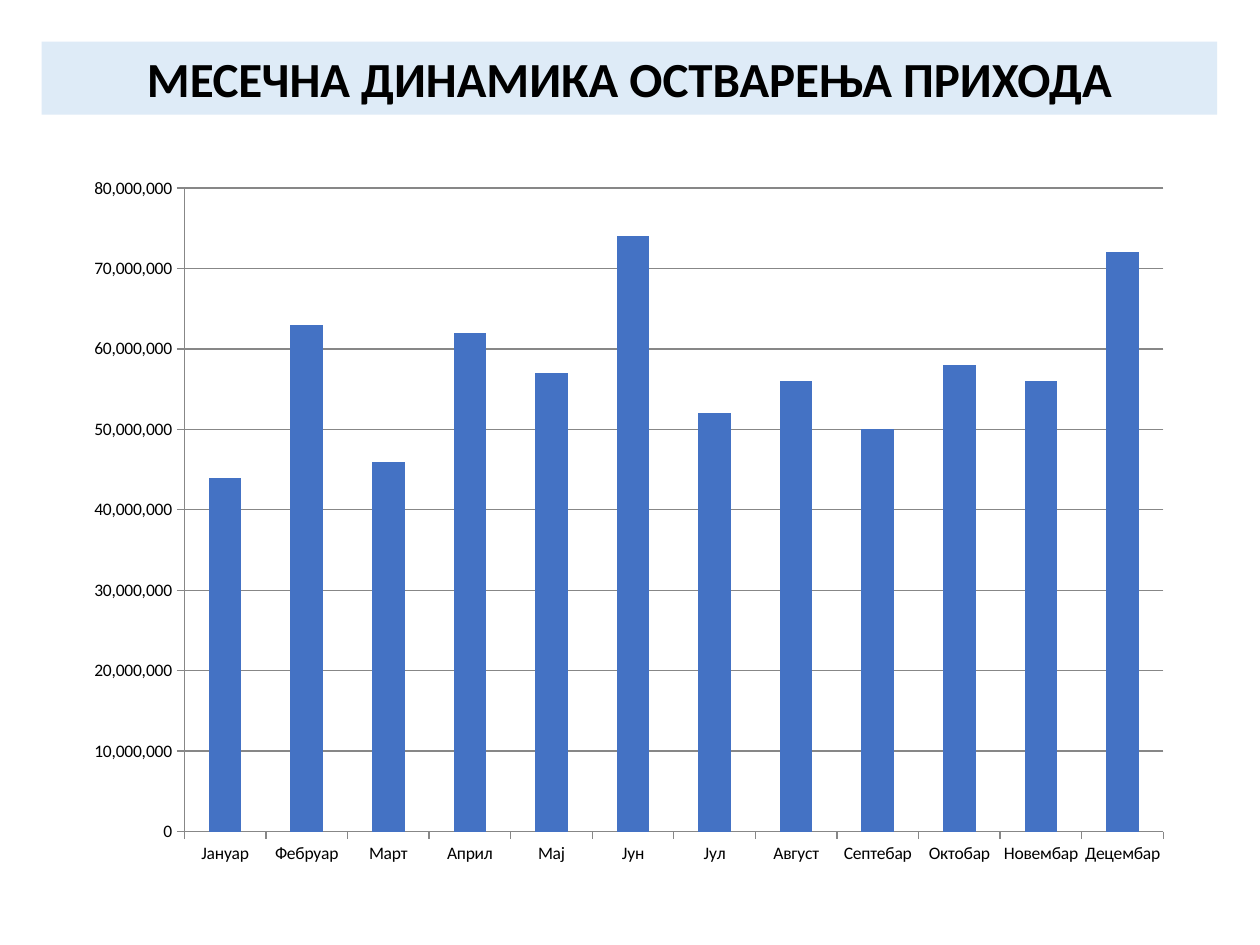
from dataclasses import dataclass

from lxml import etree
from pptx import Presentation
from pptx import util as u
from pptx.chart import data
from pptx.dml import color
from pptx.enum import chart as charts
from pptx.enum import text
from pptx.oxml import ns


@dataclass(frozen=True)
class Theme:
    """Colours, font and type sizes."""

    font: str = "Calibri"
    ink: str = "000000"
    banner: str = "DEEBF7"
    bar: str = "4472C4"
    rule: str = "878787"
    title_size: int = 28
    chart_size: int = 10


class SlideBuilder:
    """Holds the theme and the current slide."""

    def __init__(self, deck, theme):
        """Add a title-only slide to the deck."""
        self.theme = theme
        self.page = deck.slides.add_slide(deck.slide_layouts[5])

    def style(self, font, size, bold=False):
        """Apply the theme font at a given size."""
        font.name = self.theme.font
        font.size = u.Pt(size)
        font.bold = bold
        font.color.rgb = color.RGBColor.from_string(self.theme.ink)

    def rule(self, line):
        """Draw a thin grey chart line."""
        line.color.rgb = color.RGBColor.from_string(self.theme.rule)
        line.width = u.Pt(0.75)

    def title(self, wording, left, top, width, height):
        """Place the title on a filled banner."""
        box = self.page.shapes.title
        box.left, box.top = u.Inches(left), u.Inches(top)
        box.width, box.height = u.Inches(width), u.Inches(height)
        box.fill.solid()
        box.fill.fore_color.rgb = color.RGBColor.from_string(self.theme.banner)
        frame = box.text_frame
        frame.text = wording
        frame.word_wrap = True
        frame.auto_size = text.MSO_AUTO_SIZE.NONE
        frame.vertical_anchor = text.MSO_ANCHOR.BOTTOM
        para = frame.paragraphs[0]
        para.alignment = text.PP_ALIGN.CENTER
        para.line_spacing = 0.9
        self.style(para.font, self.theme.title_size, bold=True)

    def columns(self, name, values, left, top, width, height, plot_area):
        """Add a single-series column chart."""
        chart_data = data.CategoryChartData(number_format="#,##0")
        chart_data.categories = list(values)
        chart_data.add_series(name, list(values.values()))
        chart = self.page.shapes.add_chart(
            charts.XL_CHART_TYPE.COLUMN_CLUSTERED,
            *map(u.Inches, (left, top, width, height)), chart_data).chart
        chart.has_legend = False
        chart.has_title = False
        self.style(chart.font, self.theme.chart_size)
        plot = chart.plots[0]
        plot.gap_width = 150
        plot.vary_by_categories = False
        fill = plot.series[0].format.fill
        fill.solid()
        fill.fore_color.rgb = color.RGBColor.from_string(self.theme.bar)
        for axis in (chart.category_axis, chart.value_axis):
            axis.major_tick_mark = charts.XL_TICK_MARK.OUTSIDE
            axis.minor_tick_mark = charts.XL_TICK_MARK.NONE
            self.rule(axis.format.line)
        axis = chart.value_axis
        axis.minimum_scale, axis.maximum_scale = 0, 80_000_000
        axis.major_unit = 10_000_000
        axis.tick_labels.number_format = "#,##0"
        axis.tick_labels.number_format_is_linked = False
        axis.has_major_gridlines = True
        self.rule(axis.major_gridlines.format.line)
        self.place_plot(chart, plot_area)

    def place_plot(self, chart, plot_area):
        """Fix the inner plot area as fractions of the chart."""
        area = chart.element.find(".//" + ns.qn("c:plotArea"))
        for old in area.findall(ns.qn("c:layout")):
            area.remove(old)
        layout = etree.Element(ns.qn("c:layout"))
        area.insert(0, layout)
        manual = etree.SubElement(layout, ns.qn("c:manualLayout"))
        settings = [("layoutTarget", "inner"), ("xMode", "edge"), ("yMode", "edge")]
        settings += zip("xywh", plot_area)
        for tag, value in settings:
            etree.SubElement(manual, ns.qn(f"c:{tag}"), val=str(value))


MONTHLY_REVENUE = {
    "Јануар": 44_000_000,
    "Фебруар": 63_000_000,
    "Март": 46_000_000,
    "Април": 62_000_000,
    "Мај": 57_000_000,
    "Јун": 74_000_000,
    "Јул": 52_000_000,
    "Август": 56_000_000,
    "Септебар": 50_000_000,
    "Октобар": 58_000_000,
    "Новембар": 56_000_000,
    "Децембар": 72_000_000,
}


def main():
    """Build and save the monthly revenue slide."""
    deck = Presentation()
    deck.slide_width, deck.slide_height = u.Inches(10), u.Inches(7.5)
    slide = SlideBuilder(deck, Theme())
    slide.title("МЕСЕЧНА ДИНАМИКА ОСТВАРЕЊА ПРИХОДА", 0.33, 0.33, 9.33, 0.58)
    slide.columns("Series 1", MONTHLY_REVENUE, 0.58, 1.25, 8.83, 6.08,
                  plot_area=(0.1, 0.04, 0.88, 0.84))
    deck.save("out.pptx")


if __name__ == "__main__":
    main()
